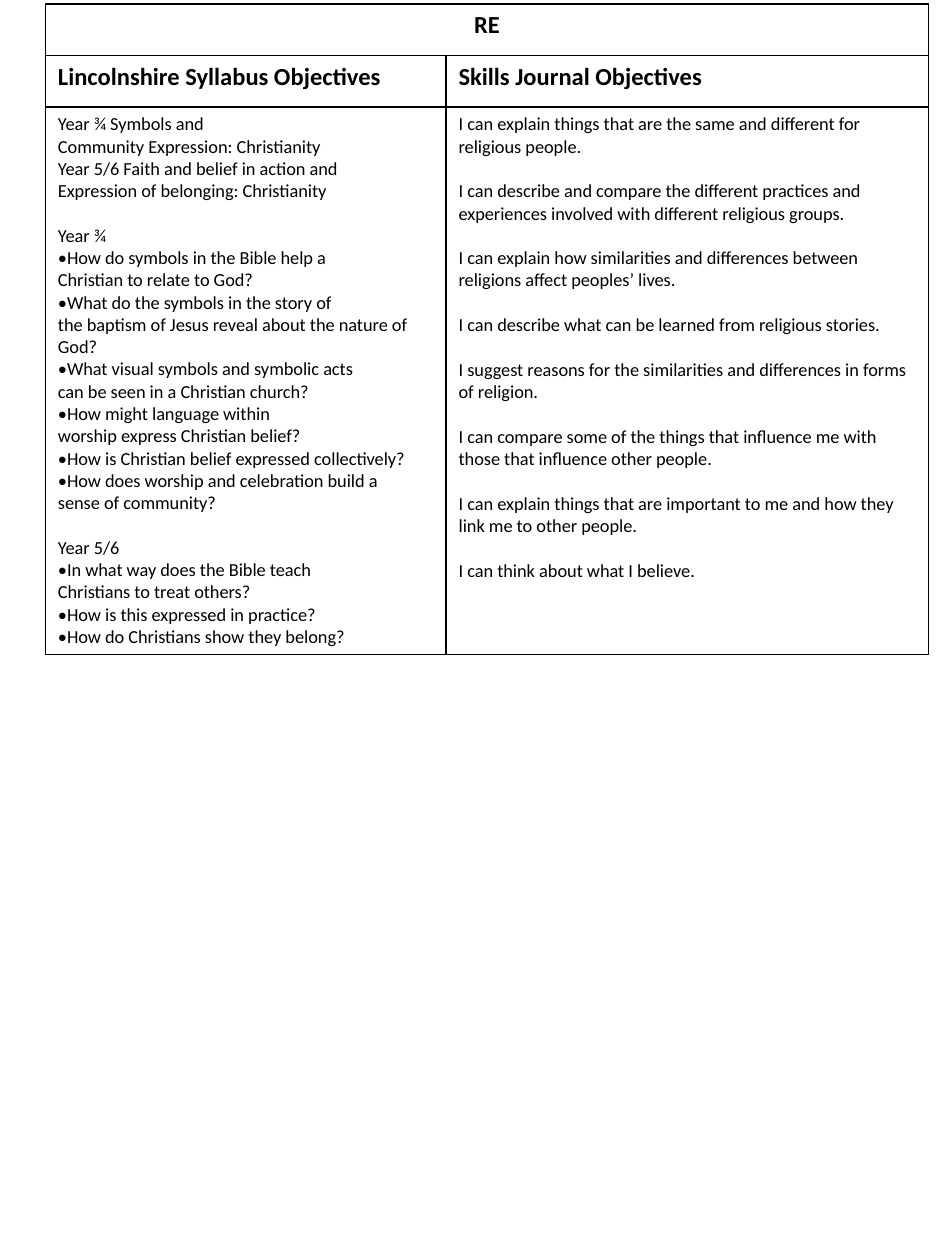
from lxml import etree
from pptx import Presentation
from pptx.dml.color import RGBColor
from pptx.enum.text import PP_ALIGN
from pptx.oxml.ns import qn
from pptx.util import Inches, Pt

CENTER, LEFT = PP_ALIGN.CENTER, PP_ALIGN.LEFT
FONT, INK = "Calibri", "000000"
HEADING_SIZE, BODY_SIZE, GROUP_GAP = 14, 10.5, 12.8
TIE, HARD_SPACE = "~", chr(160)

SUBJECT = "RE"
HEADINGS = ["Lincolnshire Syllabus Objectives", "Skills Journal Objectives"]
SYLLABUS = [
    ["Year~¾ Symbols and Community~Expression:~Christianity",
     "Year 5/6 Faith and belief in action and Expression~of~belonging: Christianity"],
    ["Year ¾",
     "•How do symbols in the Bible help a Christian~to~relate to God?",
     "•What do the symbols in the story of the~baptism~of Jesus reveal about the nature of God?",
     "•What visual symbols and symbolic acts can~be~seen in a Christian church?",
     "•How might language within worship~express~Christian belief?",
     "•How is Christian belief expressed collectively?",
     "•How does worship and celebration build a sense~of~community?"],
    ["Year 5/6",
     "•In what way does the Bible teach Christians~to~treat others?",
     "•How is this expressed in practice?",
     "•How do Christians show they belong?"],
]
SKILLS = [
    ["I can explain things that are the same and different for religious people."],
    ["I can describe and compare the different practices and experiences "
     "involved with different religious groups."],
    ["I can explain how similarities and differences between religions affect peoples’ lives."],
    ["I can describe what can be learned from religious stories."],
    ["I suggest reasons for the similarities and differences in forms of religion."],
    ["I can compare some of the things that influence me with those that influence other people."],
    ["I can explain things that are important to me and how they link me to other people."],
    ["I can think about what I believe."],
]
COLUMNS = [3.18, 3.83]
ROWS = [0.41, 0.41, 4.33]


def color(hex_code):
    """Turn a hex string into a colour."""
    return RGBColor.from_string(hex_code)


def outline(cell):
    """Draw a one-point line on all four sides of a cell."""
    properties = cell._tc.get_or_add_tcPr()
    for place, side in enumerate(("a:lnL", "a:lnR", "a:lnT", "a:lnB")):
        border = etree.Element(qn(side), w=str(Pt(1)))
        fill = etree.SubElement(border, qn("a:solidFill"))
        etree.SubElement(fill, qn("a:srgbClr"), val=INK)
        properties.insert(place, border)


def write(cell, groups, size, bold=False, align=LEFT):
    """Fill a cell with groups of paragraphs set apart by a gap."""
    lines = [(text.replace(TIE, HARD_SPACE), number > 0 and place == 0)
             for number, group in enumerate(groups)
             for place, text in enumerate(group)]
    cell.text_frame.text = "\n".join(text for text, _ in lines)
    for paragraph, (_, opens_group) in zip(cell.text_frame.paragraphs, lines):
        paragraph.alignment = align
        if opens_group:
            paragraph.space_before = Pt(GROUP_GAP)
        for run in paragraph.runs:
            run.font.name, run.font.size, run.font.bold = FONT, Pt(size), bold
            run.font.color.rgb = color(INK)


def main():
    """Build the objectives slide."""
    deck = Presentation()
    deck.slide_width, deck.slide_height = Inches(7.5), Inches(10)
    slide = deck.slides.add_slide(deck.slide_layouts[6])
    objectives = slide.shapes.add_table(
        len(ROWS), len(COLUMNS), Inches(0.36), Inches(0.03),
        Inches(sum(COLUMNS)), Inches(sum(ROWS))).table
    objectives.first_row = objectives.horz_banding = False
    for column, width in zip(objectives.columns, COLUMNS):
        column.width = Inches(width)
    for row, height in zip(objectives.rows, ROWS):
        row.height = Inches(height)
    for cell in objectives.iter_cells():
        cell.fill.background()
        outline(cell)

    objectives.cell(0, 0).merge(objectives.cell(0, 1))
    write(objectives.cell(0, 0), [[SUBJECT]], HEADING_SIZE, True, CENTER)
    for index, (heading, groups) in enumerate(zip(HEADINGS, (SYLLABUS, SKILLS))):
        write(objectives.cell(1, index), [[heading]], HEADING_SIZE, True)
        write(objectives.cell(2, index), groups, BODY_SIZE)
    deck.save("out.pptx")


if __name__ == "__main__":
    main()
